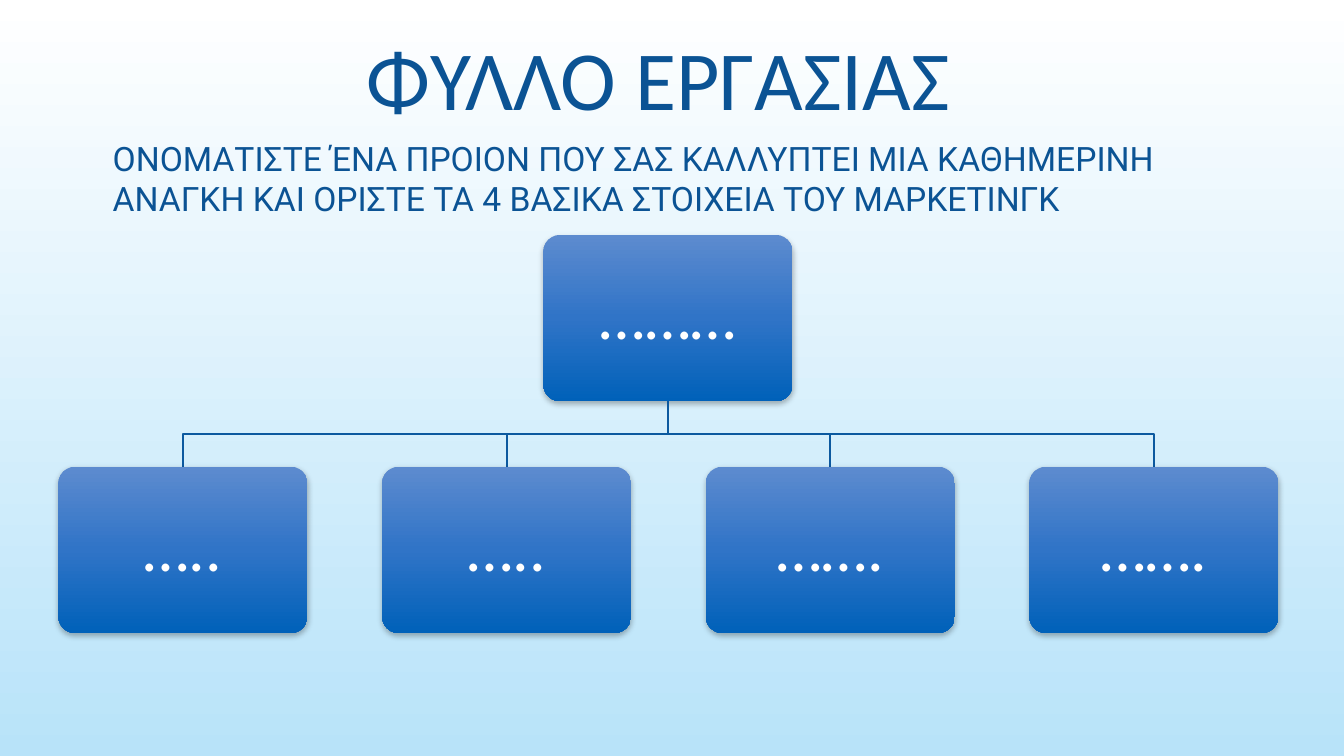
from lxml import etree
from pptx import Presentation
from pptx import util as u
from pptx.dml.color import RGBColor
from pptx.enum import shapes, text
from pptx.oxml import parse_xml
from pptx.oxml.ns import qn, nsdecls

COLORS = {
    "sky": ["FFFFFF", "B8E3F9"],
    "card": ["5D8BCF", "3074C7", "0061B9"],
    "branch": "0C599F",
    "heading": "0B5394",
    "card_text": "FFFFFF",
}


def write(frame, words, size, color, font="Calibri", align=text.PP_ALIGN.LEFT,
          anchor=text.MSO_ANCHOR.TOP, spacing=None, inset=None):
    frame.word_wrap = True
    frame.vertical_anchor = anchor
    if inset is not None:
        frame.margin_left = frame.margin_right = u.Inches(inset)
        frame.margin_top = frame.margin_bottom = u.Inches(inset)
    line = frame.paragraphs[0]
    line.alignment = align
    line.line_spacing = spacing
    run = line.add_run()
    run.text = words
    run.font.size = u.Pt(size)
    run.font.name = font
    run.font.color.rgb = RGBColor.from_string(color)


def shade_down(fill, element, colors):
    fill.gradient()
    fill.gradient_angle = 270
    stops = next(element.iter(qn("a:gsLst")))
    for stop in list(stops):
        stops.remove(stop)
    for i, color in enumerate(colors):
        position = str(i * 100000 // (len(colors) - 1))
        stop = etree.SubElement(stops, qn("a:gs"), pos=position)
        etree.SubElement(stop, qn("a:srgbClr"), val=color)


prs = Presentation()
prs.slide_width = u.Inches(13.33)
prs.slide_height = u.Inches(7.5)
slide = prs.slides.add_slide(prs.slide_layouts[6])
shade_down(slide.background.fill, slide._element, COLORS["sky"])

CARD_W, CARD_H = 2.47, 1.65
PRODUCT_LEFT, PRODUCT_TOP = 5.39, 2.33
FIRST_LEFT, ELEMENT_TOP, PITCH = 0.58, 4.63, 3.21

elements = ["…..", "…..", "…….", "……."]
cards = [(PRODUCT_LEFT, PRODUCT_TOP, "………")]
cards += [(FIRST_LEFT + i * PITCH, ELEMENT_TOP, dots) for i, dots in enumerate(elements)]

trunk_x = u.Inches(PRODUCT_LEFT + CARD_W / 2)
trunk_top = u.Inches(PRODUCT_TOP + CARD_H)
branch_bottom = u.Inches(ELEMENT_TOP)
branch_y = (trunk_top + branch_bottom) // 2

for left, top, dots in cards:
    if top == ELEMENT_TOP:
        branch_x = u.Inches(left + CARD_W / 2)
        route = slide.shapes.build_freeform(trunk_x, trunk_top)
        route.add_line_segments(
            [(trunk_x, branch_y), (branch_x, branch_y), (branch_x, branch_bottom)], close=False)
        branch = route.convert_to_shape()
        branch.shadow.inherit = False
        branch.fill.background()
        branch.line.color.rgb = RGBColor.from_string(COLORS["branch"])
        branch.line.width = u.Pt(1.25)

    card = slide.shapes.add_shape(
        shapes.MSO_SHAPE.ROUNDED_RECTANGLE,
        u.Inches(left), u.Inches(top), u.Inches(CARD_W), u.Inches(CARD_H))
    card.adjustments[0] = 0.1
    card.line.fill.background()
    shade_down(card.fill, card._element, COLORS["card"])
    card.shadow.inherit = False
    card._element.spPr.find(qn("a:effectLst")).append(parse_xml(
        f'<a:outerShdw {nsdecls("a")} blurRad="{u.Pt(4)}" dist="{u.Pt(2)}" dir="5400000" '
        'rotWithShape="0"><a:srgbClr val="000000"><a:alpha val="28000"/></a:srgbClr>'
        '</a:outerShdw>'))
    write(card.text_frame, dots, 47, COLORS["card_text"], align=text.PP_ALIGN.CENTER,
          anchor=text.MSO_ANCHOR.MIDDLE, spacing=0.9, inset=0.2)

headings = [
    (3.54, 0.21, 6.25, 1.11, "ΦΥΛΛΟ ΕΡΓΑΣΙΑΣ", 60, "Calibri"),
    (1.02, 1.32, 11.67, 0.91,
     "ΟΝΟΜΑΤΙΣΤΕ ΈΝΑ ΠΡΟΙΟΝ ΠΟΥ ΣΑΣ ΚΑΛΛΥΠΤΕΙ ΜΙΑ ΚΑΘΗΜΕΡΙΝΗ "
     "ΑΝΑΓΚΗ ΚΑΙ ΟΡΙΣΤΕ ΤΑ 4 ΒΑΣΙΚΑ ΣΤΟΙΧΕΙΑ ΤΟΥ ΜΑΡΚΕΤΙΝΓΚ", 24, "Roboto"),
]
for left, top, width, height, words, size, font in headings:
    heading = slide.shapes.add_textbox(
        u.Inches(left), u.Inches(top), u.Inches(width), u.Inches(height))
    heading.text_frame.auto_size = text.MSO_AUTO_SIZE.SHAPE_TO_FIT_TEXT
    write(heading.text_frame, words, size, COLORS["heading"], font=font)

prs.save("out.pptx")
